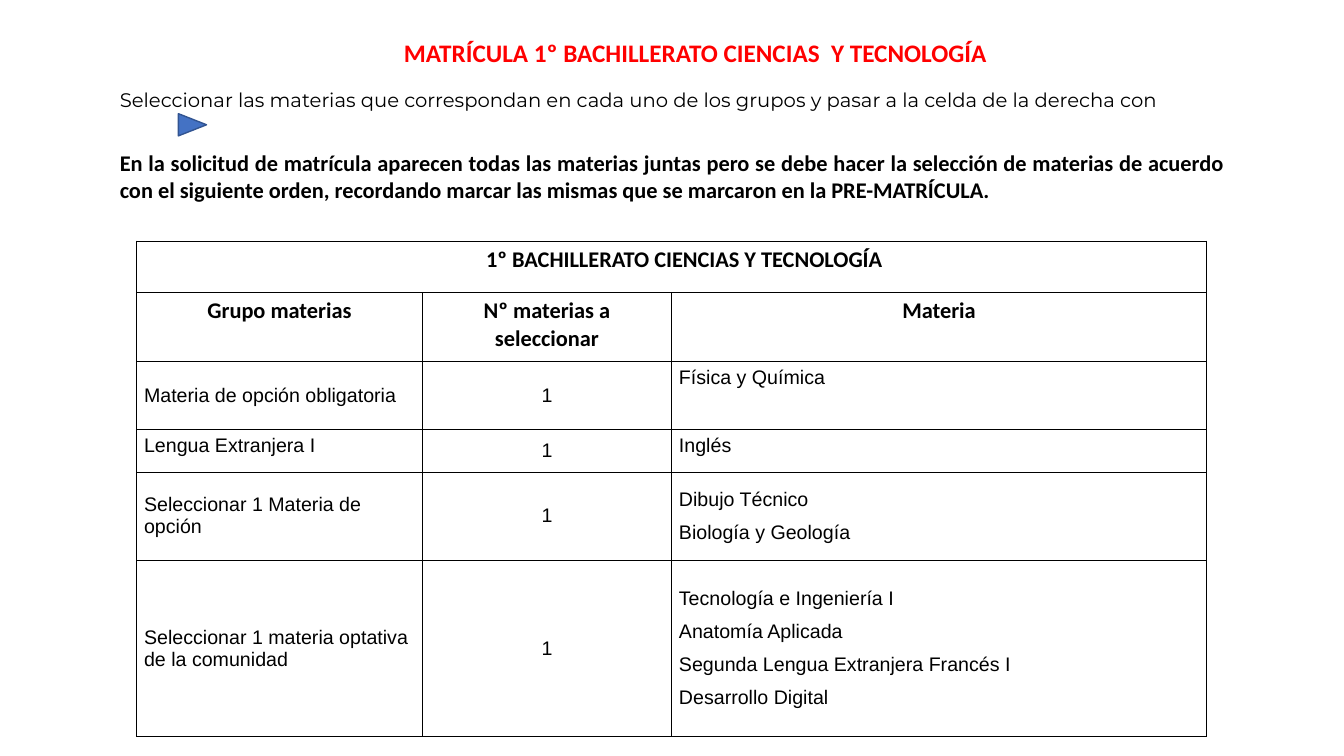
from pptx import Presentation
from pptx.dml.color import RGBColor
from pptx.enum.shapes import MSO_SHAPE as Shape
from pptx.enum.text import MSO_ANCHOR as Anchor, PP_ALIGN as Align
from pptx.oxml import parse_xml
from pptx.oxml.ns import nsdecls
from pptx.util import Cm, Pt

BLACK = RGBColor(0x00, 0x00, 0x00)
RED = RGBColor(0xFF, 0x00, 0x00)
BLUE = RGBColor(0x44, 0x72, 0xC4)
DARK_BLUE = RGBColor(0x32, 0x54, 0x91)

TEXTS = [
    ("MATRÍCULA 1º BACHILLERATO CIENCIAS  Y TECNOLOGÍA",
     (3.48, 0.81, 28.09, 1.8), Align.CENTER, ("Calibri", 18, RED, True)),
    ("Seleccionar las materias que correspondan en cada uno de los grupos "
     "y pasar a la celda de la derecha con",
     (2.77, 2.08, 29.03, 2.24), Align.LEFT, ("Montserrat", 14, BLACK, False)),
    ("En la solicitud de matrícula aparecen todas las materias juntas pero se debe "
     "hacer la selección de materias de acuerdo con el siguiente orden, recordando "
     "marcar las mismas que se marcaron en la PRE-MATRÍCULA.",
     (2.77, 3.63, 28.35, 1.63), Align.JUSTIFY, ("Calibri", 16, BLACK, True)),
]
ARROW_BOX = (4.57, 2.79, 0.56, 0.71)

TABLE_TITLE = "1º BACHILLERATO CIENCIAS Y TECNOLOGÍA"
HEADINGS = ("Grupo materias", "Nº materias a seleccionar", "Materia")
GROUPS = [
    ("Materia de opción obligatoria", "1", "Física y Química"),
    ("Lengua Extranjera I", "1", "Inglés"),
    ("Seleccionar 1 Materia de opción", "1", "Dibujo Técnico\nBiología y Geología"),
    ("Seleccionar 1 materia optativa de la comunidad", "1",
     "Tecnología e Ingeniería I\nAnatomía Aplicada\n"
     "Segunda Lengua Extranjera Francés I\nDesarrollo Digital"),
]
TOP_CELLS = {(2, 2), (3, 0), (3, 2)}
TABLE_ORIGIN = (3.44, 6.07)
COLUMN_WIDTHS = (7.21, 6.27, 13.49)
ROW_HEIGHTS = (1.3, 1.73, 1.73, 1.07, 2.21, 4.45)
HEADING_STYLE = ("Calibri", 16, BLACK, True)
BODY_STYLE = ("Arial", 14, BLACK, False)


def write(frame, text, align, style, space_after=0):
    frame.text = text
    name, size, color, bold = style
    for paragraph in frame.paragraphs:
        paragraph.alignment = align
        paragraph.space_after = Pt(space_after)
        for run in paragraph.runs:
            run.font.name = name
            run.font.size = Pt(size)
            run.font.color.rgb = color
            run.font.bold = bold


def format_cell(cell):
    cell.margin_left = cell.margin_right = Cm(0.19)
    cell.margin_top = cell.margin_bottom = Cm(0.13)
    properties = cell._tc.get_or_add_tcPr()
    for side in ("lnL", "lnR", "lnT", "lnB"):
        properties.append(parse_xml(
            f'<a:{side} {nsdecls("a")} w="{Pt(0.5)}"><a:solidFill>'
            f'<a:srgbClr val="{BLACK}"/></a:solidFill></a:{side}>'))
    cell.fill.background()


def add_subjects(slide):
    rows = [(TABLE_TITLE, "", ""), HEADINGS, *GROUPS]
    size = (sum(COLUMN_WIDTHS), sum(ROW_HEIGHTS))
    table = slide.shapes.add_table(
        len(rows), len(HEADINGS), *map(Cm, TABLE_ORIGIN + size)).table
    table.first_row = table.horz_banding = False
    for column, width in zip(table.columns, COLUMN_WIDTHS):
        column.width = Cm(width)
    for row, height in zip(table.rows, ROW_HEIGHTS):
        row.height = Cm(height)
    for r, texts in enumerate(rows):
        for c, text in enumerate(texts):
            cell = table.cell(r, c)
            format_cell(cell)
            heading = r < 2
            top = heading or (r, c) in TOP_CELLS
            cell.vertical_anchor = Anchor.TOP if top else Anchor.MIDDLE
            align = Align.CENTER if heading or c == 1 else Align.LEFT
            tight = c == 0 and r in (1, 2, 4, 5)
            write(cell.text_frame, text, align,
                  HEADING_STYLE if heading else BODY_STYLE, 0 if tight else 8)
    title_cell = table.cell(0, 0)
    title_cell.merge(table.cell(0, len(HEADINGS) - 1))
    title_cell.margin_left = Cm(0.83)


def main():
    presentation = Presentation()
    presentation.slide_width, presentation.slide_height = Cm(33.87), Cm(19.05)
    slide = presentation.slides.add_slide(presentation.slide_layouts[6])
    for text, box, align, style in TEXTS:
        frame = slide.shapes.add_textbox(*map(Cm, box)).text_frame
        frame.word_wrap = True
        write(frame, text, align, style)
    arrow = slide.shapes.add_shape(Shape.ISOSCELES_TRIANGLE, *map(Cm, ARROW_BOX))
    arrow.rotation = 90
    arrow.shadow.inherit = False
    arrow.fill.solid()
    arrow.fill.fore_color.rgb = BLUE
    arrow.line.color.rgb = DARK_BLUE
    arrow.line.width = Pt(1)
    add_subjects(slide)
    presentation.save("out.pptx")


if __name__ == "__main__":
    main()
